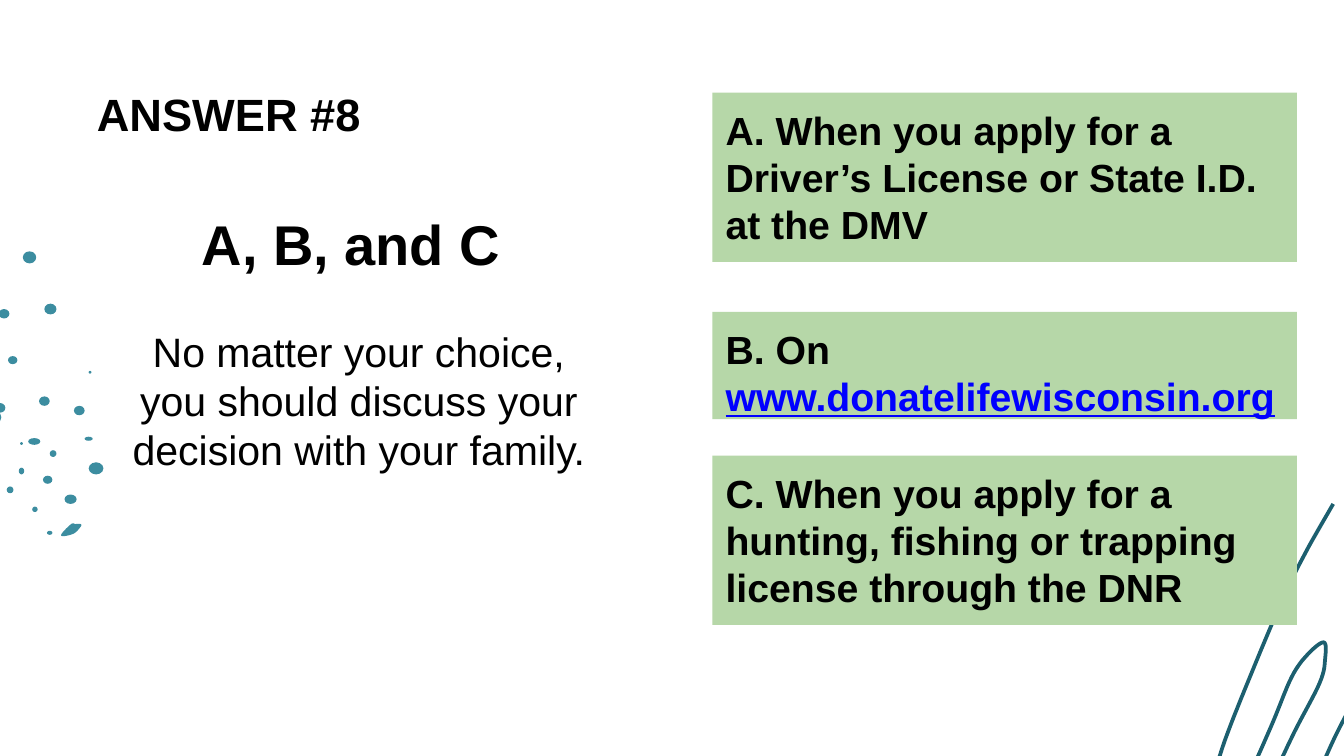
from pptx import Presentation
from pptx.dml.color import RGBColor
from pptx.enum.shapes import MSO_SHAPE
from pptx.enum.text import MSO_ANCHOR, PP_ALIGN
from pptx.util import Inches, Pt

COLORS = {"dots": "3C8DA0", "scribble": "1C5F6F", "box": "B6D7A8",
          "text": "000000", "link": "0000FF"}
CELL = Inches(0.1)  # square grid: 100 columns by 56.25 rows
MARGIN = CELL
FINE = 1000         # freeform units per cell

prs = Presentation()
prs.slide_width, prs.slide_height = 100 * CELL, int(56.25 * CELL)
s = prs.slides.add_slide(prs.slide_layouts[5])


def add_run(p, text, size, bold=True, color="text"):
    r = p.add_run()
    r.text = text
    r.font.name, r.font.size, r.font.bold = "Arial", Pt(size), bold
    r.font.color.rgb = RGBColor.from_string(COLORS[color])
    p.line_spacing = 1.0
    return r


def smooth_shape(knots, steps=8):
    """Freeform through the knots, rounded as a Catmull-Rom spline."""
    ends = [knots[0], *knots, knots[-1]]
    points = []
    for a, b, c, d in zip(ends, ends[1:], ends[2:], ends[3:]):
        for i in range(steps):
            t = i / steps
            points.append([FINE * (b[k] + t * (c[k] - a[k]) / 2
                           + t**2 * (2 * a[k] - 5 * b[k] + 4 * c[k] - d[k]) / 2
                           + t**3 * (3 * b[k] - a[k] - 3 * c[k] + d[k]) / 2)
                           for k in (0, 1)])
    points.append([FINE * v for v in knots[-1]])
    fb = s.shapes.build_freeform(*points[0], scale=CELL / FINE)
    fb.add_line_segments(points[1:], close=knots[0] == knots[-1])
    sp = fb.convert_to_shape()
    sp.shadow.inherit = False
    return sp


# Dots on the left edge: column, row, width, height
dots = [
    (-1.2, 30.5, 1.3, 1.1), (1.5, 32.9, 0.2, 0.2), (1.4, 34.8, 0.4, 0.5),
    (2.4, 37.7, 0.4, 0.4), (3.5, 39.5, 0.4, 0.3), (4.8, 36.8, 0.9, 0.7),
    (3.2, 35.4, 0.7, 0.6), (0.5, 36.2, 0.5, 0.5), (3.7, 33.5, 0.5, 0.5),
    (2.1, 32.6, 0.9, 0.5), (2.9, 29.5, 0.8, 0.7), (-0.3, 30, 0.7, 0.7),
    (0.6, 26.5, 0.7, 0.6), (-0.1, 23, 0.8, 0.7), (6.6, 27.6, 0.2, 0.2),
    (5.5, 30.2, 0.8, 0.7), (6.3, 32.5, 0.6, 0.3), (6.6, 34.4, 1.1, 0.9),
    (3.3, 22.6, 0.9, 0.8), (1.7, 18.7, 1, 0.9),
]
for dot in dots:
    sp = s.shapes.add_shape(MSO_SHAPE.OVAL, *[int(v * CELL) for v in dot])
    sp.shadow.inherit = False
    sp.fill.solid()
    sp.fill.fore_color.rgb = RGBColor.from_string(COLORS["dots"])
    sp.line.fill.background()

# Leaf below the dots
leaf = smooth_shape([(5.6, 39), (5.3, 39), (4.6, 39.7), (4.7, 39.9),
                     (5.5, 39.7), (6, 39.2), (6, 39), (5.6, 39)])
leaf.fill.solid()
leaf.fill.fore_color.rgb = RGBColor.from_string(COLORS["dots"])
leaf.line.fill.background()

# Scribble in the bottom right corner
scribble = smooth_shape([
    (99.2, 37.5), (97.1, 41.2), (95.3, 44.9), (92.3, 52.1), (90.9, 55.8),
    (90.6, 57.3), (91, 58.5), (91.8, 58.7), (92.8, 57.9), (94.6, 54),
    (96.1, 50.4), (97.3, 48.7), (98.5, 47.8), (98.6, 49), (98.2, 50.8),
    (96.3, 54.5), (94.5, 58.3), (93.2, 61), (92.9, 62.7), (93.3, 63.6),
    (94.2, 63.8), (95.5, 63.1), (96.5, 61.3), (99.3, 54.9), (101.2, 51.5),
    (103, 49.1), (103.9, 48.8), (104.1, 50.5), (102.5, 55.3), (100.5, 58.8),
    (98.7, 62.5), (97.2, 66.3), (97.8, 67.1), (99.5, 65.6), (102, 60.7),
    (104.5, 55.3), (106.2, 52.6), (107.8, 52), (108.4, 53.5), (107, 57.5),
    (104, 62.6), (101.2, 67.4), (101, 69), (102.2, 69.8), (104, 68.6),
    (106, 64.5), (110, 56.6),
])
scribble.fill.background()
scribble.line.color.rgb = RGBColor.from_string(COLORS["scribble"])
scribble.line.width = Pt(2)

# Title
title = s.shapes.title
title.left, title.top = int(6.2 * CELL), int(5.4 * CELL)
title.width, title.height = int(89.2 * CELL), int(6.3 * CELL)

# Answer text
answer = s.shapes.add_textbox(int(8.75 * CELL), int(14.6 * CELL),
                              int(35.9 * CELL), int(38.4 * CELL))

# Green boxes: top row, height, runs
boxes = [
    (6.9, 12.6, [("A. When you apply for a Driver’s License or State I.D. "
                  "at the DMV", "text")]),
    (23.2, 8, [("B. On ", "text"), ("www.donatelifewisconsin.org", "link")]),
    (33.9, 12.6, [("C. When you apply for a hunting, fishing or trapping "
                   "license through the DNR", "text")]),
]
frames = [title.text_frame, answer.text_frame]
for top, height, runs in boxes:
    sp = s.shapes.add_shape(MSO_SHAPE.RECTANGLE, 53 * CELL, int(top * CELL),
                            int(43.5 * CELL), int(height * CELL))
    sp.shadow.inherit = False
    sp.fill.solid()
    sp.fill.fore_color.rgb = RGBColor.from_string(COLORS["box"])
    sp.line.fill.background()
    p = sp.text_frame.paragraphs[0]
    p.alignment = PP_ALIGN.LEFT
    for text, color in runs:
        r = add_run(p, text, 21, color=color)
        r.font.underline = color == "link"
    frames.append(sp.text_frame)

# Shared frame settings
for tf in frames:
    tf.word_wrap = True
    tf.vertical_anchor = MSO_ANCHOR.TOP
    tf.margin_left = tf.margin_right = MARGIN
    tf.margin_top = tf.margin_bottom = MARGIN

# Title and answer wording
p = title.text_frame.paragraphs[0]
p.alignment = PP_ALIGN.LEFT
add_run(p, "ANSWER #8", 24.2)

p = answer.text_frame.paragraphs[0]
p.alignment = PP_ALIGN.CENTER
add_run(p, "A, B, and C ", 30)
p = answer.text_frame.add_paragraph()
p.alignment = PP_ALIGN.CENTER
p.space_before = Pt(26.5)
add_run(p, "No matter your choice, you should discuss your decision "
           "with your family.", 22, bold=False)

prs.save("out.pptx")
